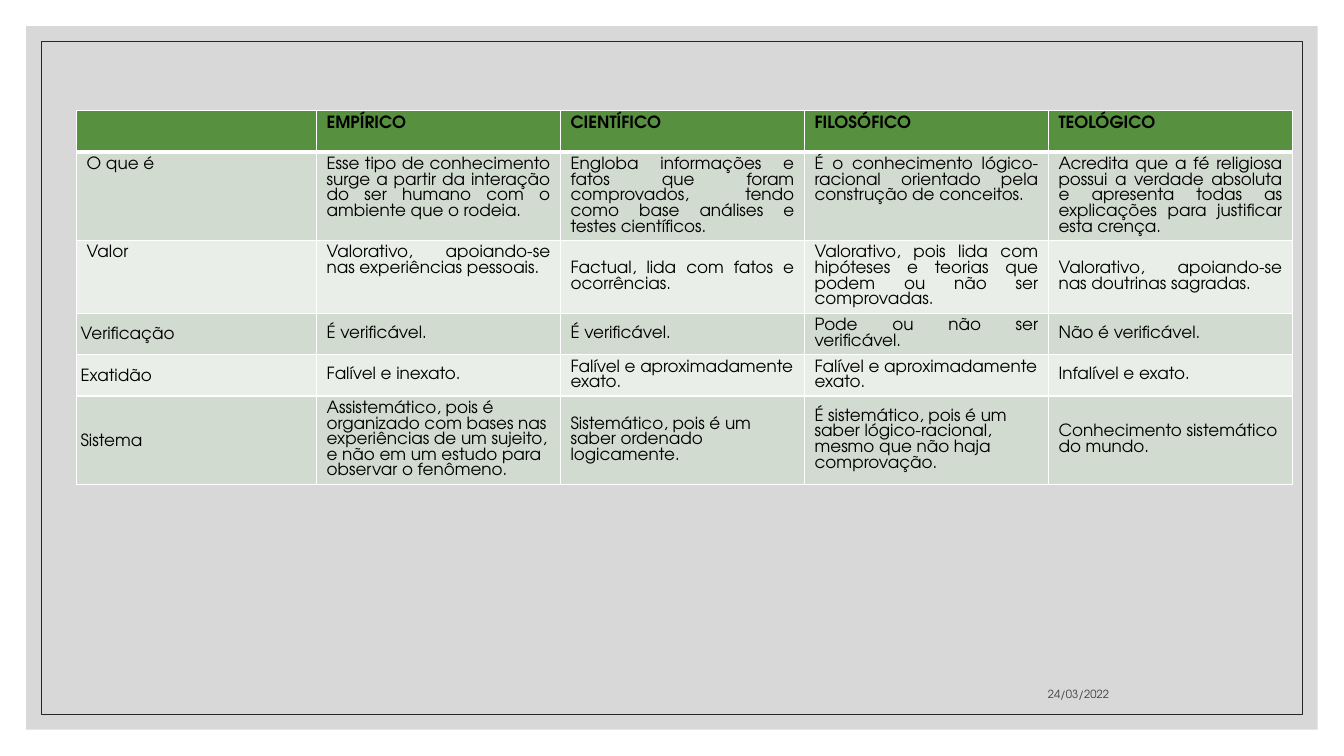
from lxml.etree import SubElement
from pptx import Presentation
from pptx.dml.color import RGBColor
from pptx.enum.shapes import MSO_SHAPE
from pptx.enum.text import MSO_ANCHOR, PP_ALIGN
from pptx.oxml.ns import qn
from pptx.util import Inches, Pt

FONT = "TeX Gyre Adventor"
HEADER, BAND_DARK, BAND_LIGHT = "57903F", "D1DBCF", "EAEEE8"
ROWS = [
    ("", "EMPÍRICO", "CIENTÍFICO", "FILOSÓFICO", "TEOLÓGICO"),
    ("O que é",
     "Esse tipo de conhecimento surge a partir da interação do ser humano com o ambiente que o rodeia.",
     "Engloba informações e fatos que foram comprovados, tendo como base análises e testes científicos.",
     "É o conhecimento lógico-racional orientado pela construção de conceitos.",
     "Acredita que a fé religiosa possui a verdade absoluta e apresenta todas as explicações para justificar esta crença."),
    ("Valor",
     "Valorativo, apoiando-se nas experiências pessoais.",
     "Factual, lida com fatos e ocorrências.",
     "Valorativo, pois lida com hipóteses e teorias que podem ou não ser comprovadas.",
     "Valorativo, apoiando-se nas doutrinas sagradas."),
    ("Verificação", "É verificável.", "É verificável.",
     "Pode ou não ser verificável.", "Não é verificável."),
    ("Exatidão", "Falível e inexato.", "Falível e aproximadamente exato.",
     "Falível e aproximadamente exato.", "Infalível e exato."),
    ("Sistema",
     "Assistemático, pois é organizado com bases nas experiências de um sujeito, e não em um estudo para observar o fenômeno.",
     "Sistemático, pois é um saber ordenado logicamente.",
     "É sistemático, pois é um saber lógico-racional, mesmo que não haja comprovação.",
     "Conhecimento sistemático do mundo."),
]
DATE = "24/03/2022"
COL_WIDTHS = [2.38] + [2.42] * 4
ROW_HEIGHT = 0.41
SLIDE_W, SLIDE_H = 13.33, 7.5


def rgb(value):
    return RGBColor.from_string(value)


def add_frame(s, margin):
    """Add a rectangle at an equal distance from all slide edges."""
    sp = s.shapes.add_shape(
        MSO_SHAPE.RECTANGLE, Inches(margin), Inches(margin),
        Inches(SLIDE_W - 2 * margin), Inches(SLIDE_H - 2 * margin))
    sp.shadow.inherit = False
    return sp


def write(tf, text, size, color, align, bold=False):
    tf.text = text
    p = tf.paragraphs[0]
    p.alignment = align
    for r in p.runs:
        r.font.name, r.font.size, r.font.bold = FONT, Pt(size), bold
        r.font.color.rgb = rgb(color)


def set_borders(cell, top, bottom):
    """Draw white borders; top and bottom are widths in points."""
    tcPr = cell._tc.get_or_add_tcPr()
    for side, width in (("L", 1), ("R", 1), ("T", top), ("B", bottom)):
        ln = SubElement(tcPr, qn(f"a:ln{side}"), w=str(Pt(width)))
        SubElement(SubElement(ln, qn("a:solidFill")), qn("a:srgbClr"), val="FFFFFF")


def add_comparison(s):
    table = s.shapes.add_table(
        len(ROWS), len(COL_WIDTHS), Inches(0.76), Inches(1.1),
        Inches(sum(COL_WIDTHS)), Inches(ROW_HEIGHT * len(ROWS))).table
    table.horz_banding = False
    for column, width in zip(table.columns, COL_WIDTHS):
        column.width = Inches(width)
    for i, texts in enumerate(ROWS):
        table.rows[i].height = Inches(ROW_HEIGHT)
        fill = HEADER if i == 0 else BAND_DARK if i % 2 else BAND_LIGHT
        align = PP_ALIGN.JUSTIFY if i < 4 else PP_ALIGN.LEFT
        for j, text in enumerate(texts):
            cell = table.cell(i, j)
            write(cell.text_frame, text, 12, "000000", align, bold=i == 0)
            if i > 2 or (i == 2 and j > 1):
                cell.vertical_anchor = MSO_ANCHOR.MIDDLE
            if i > 2 and j == 0:
                cell.margin_left = cell.margin_right = Inches(0.04)
                cell.margin_top, cell.margin_bottom = Inches(0.06), Inches(0.03)
            set_borders(cell, top=3 if i == 1 else 1, bottom=3 if i == 0 else 1)
            cell.fill.solid()
            cell.fill.fore_color.rgb = rgb(fill)


def main():
    prs = Presentation()
    prs.slide_width, prs.slide_height = Inches(SLIDE_W), Inches(SLIDE_H)
    s = prs.slides.add_slide(prs.slide_layouts[6])

    panel = add_frame(s, 0.26)
    panel.fill.solid()
    panel.fill.fore_color.rgb = rgb("BFBFBF")
    color = panel.fill._xPr.find(qn("a:solidFill"))[0]
    SubElement(color, qn("a:alpha"), val="60000")
    panel.line.fill.background()

    outline = add_frame(s, 0.41)
    outline.fill.background()
    outline.line.color.rgb = rgb("262626")
    outline.line.width = Pt(0.5)

    add_comparison(s)

    tf = s.shapes.add_textbox(Inches(7.94), Inches(6.6), Inches(3.16), Inches(0.4)).text_frame
    tf.word_wrap = True
    tf.vertical_anchor = MSO_ANCHOR.BOTTOM
    write(tf, DATE, 8, "404040", PP_ALIGN.RIGHT)
    prs.save("out.pptx")


if __name__ == "__main__":
    main()
